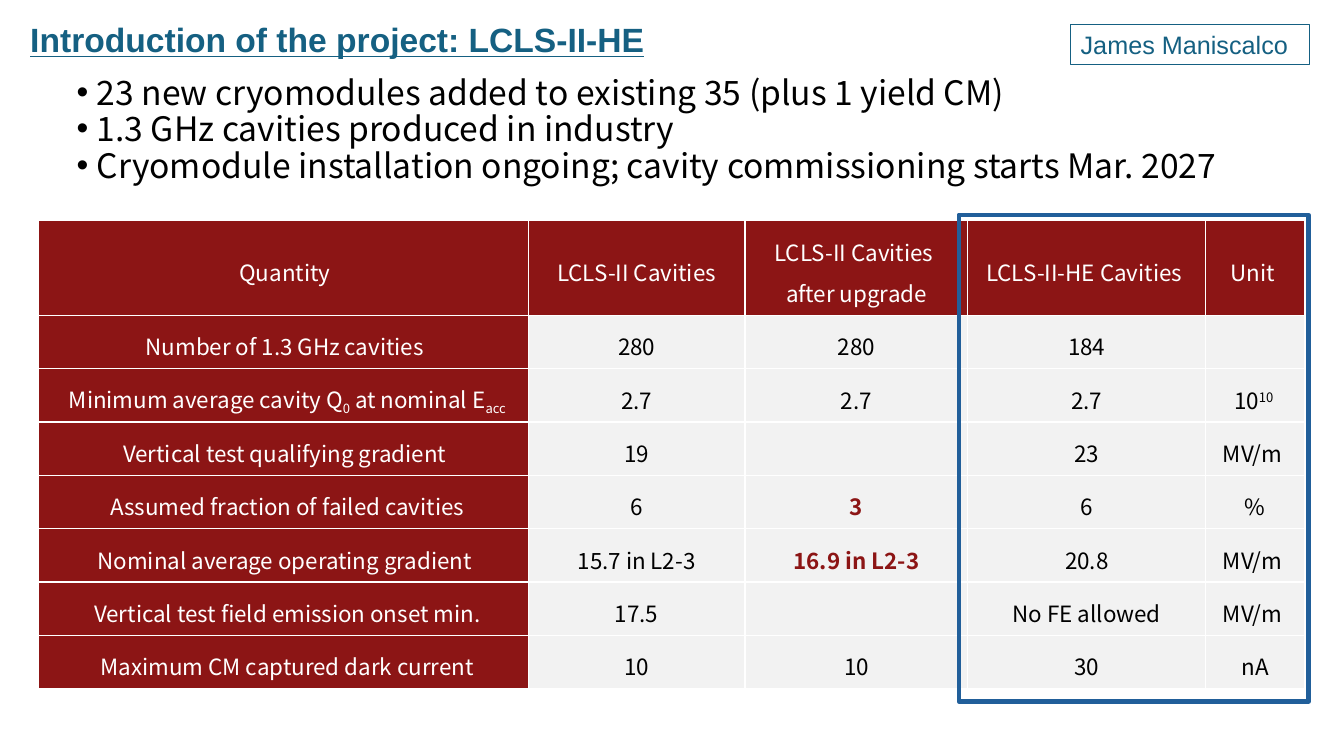
import dataclasses
import lxml.etree
import pptx
import pptx.dml.color
import pptx.enum.shapes
import pptx.enum.text
import pptx.oxml.ns
import pptx.util

ALIGN = pptx.enum.text.PP_ALIGN
ANCHOR = pptx.enum.text.MSO_ANCHOR
PT = pptx.util.Pt
WIDE, HIGH = pptx.util.Inches(13.33), pptx.util.Inches(7.5)


@dataclasses.dataclass(frozen=True)
class Theme:
    teal: str = "156082"
    blue: str = "215F9A"
    red: str = "8C1515"
    gray: str = "F2F2F2"
    white: str = "FFFFFF"
    black: str = "000000"
    head: str = "Arial"
    text: str = "Noto Sans CJK JP"
    large: int = 24
    label: int = 18
    small: int = 16


THEME = Theme()

POINTS = [
    "23 new cryomodules added to existing 35 (plus 1 yield CM)",
    "1.3 GHz cavities produced in industry",
    "Cryomodule installation ongoing; cavity commissioning starts Mar. 2027",
]

# "|" parts runs, "_" lowers, "^" raises, "*" stresses
ROWS = [
    ["Quantity ", "LCLS-II Cavities", "LCLS-II Cavities \nafter upgrade",
     "LCLS-II-HE Cavities ", "Unit "],
    ["Number of 1.3 GHz cavities ", "280", "280", "184", ""],
    ["Minimum average cavity Q|_0| at nominal E|_acc", "2.7", "2.7", "2.7", "10|^10 "],
    ["Vertical test qualifying gradient ", "19", "", "23", "MV/m "],
    ["Assumed fraction of failed cavities", "6", "*3", "6", "%"],
    ["Nominal average operating gradient ", "15.7 in L2-3", "*16.9 in L2-3", "20.8", "MV/m "],
    ["Vertical test field emission onset min.", "17.5", "", "No FE allowed", "MV/m "],
    ["Maximum CM captured dark current", "10", "10", "30", "nA"],
]
# Column widths and row heights in percent of the slide
COLS = [36.46, 16.13, 16.58, 17.7, 7.35]
TALL = [12.53] + [7.05] * 7


def across(share):
    return round(WIDE * share / 100)


def down(share):
    return round(HIGH * share / 100)


def place(left, top, width, height):
    """Turn percents of the slide into a box."""
    return across(left), down(top), across(width), down(height)


def color(code):
    return pptx.dml.color.RGBColor.from_string(code)


def style(font, name, size, code, bold=False):
    font.name, font.size, font.bold = name, PT(size), bold
    font.color.rgb = color(code)


def move(shape, box):
    shape.left, shape.top, shape.width, shape.height = box


def outline(slide, box, code, width):
    """Add an empty rectangle with a plain line."""
    shape = slide.shapes.add_shape(pptx.enum.shapes.MSO_SHAPE.RECTANGLE, *box)
    shape.shadow.inherit = False
    shape.fill.background()
    shape.line.color.rgb = color(code)
    shape.line.width = PT(width)
    return shape


def add_title(slide, box):
    title = slide.shapes.title
    move(title, box)
    frame = title.text_frame
    frame.text = "Introduction of the project: LCLS-II-HE"
    frame.auto_size = pptx.enum.text.MSO_AUTO_SIZE.NONE
    frame.vertical_anchor = ANCHOR.TOP
    para = frame.paragraphs[0]
    para.alignment = ALIGN.LEFT
    font = para.runs[0].font
    style(font, THEME.head, THEME.large, THEME.teal, True)
    font.underline = True


def add_name(slide, box):
    frame = outline(slide, box, THEME.teal, 0.75).text_frame
    frame.text = "James Maniscalco"
    frame.vertical_anchor = ANCHOR.MIDDLE
    para = frame.paragraphs[0]
    para.alignment = ALIGN.LEFT
    style(para.runs[0].font, THEME.head, THEME.label, THEME.teal)


def add_list(slide, box):
    body = slide.placeholders[1]
    move(body, box)
    frame = body.text_frame
    frame.text = "\n".join(POINTS)
    frame.auto_size = pptx.enum.text.MSO_AUTO_SIZE.NONE
    frame.vertical_anchor = ANCHOR.TOP
    hang = pptx.util.Inches(0.2)
    for rank, para in enumerate(frame.paragraphs):
        para.level = 1
        para.line_spacing = 0.8
        para.space_before = PT(3 if rank else 0)
        props = para._p.get_or_add_pPr()
        props.set("marL", str(hang))
        props.set("indent", str(-hang))
        bullet = lxml.etree.SubElement(props, pptx.oxml.ns.qn("a:buChar"))
        bullet.set("char", "•")
        style(para.runs[0].font, THEME.text, THEME.large, THEME.black)


def add_edge(cell):
    """Draw thin white lines on all four sides of a cell."""
    props = cell._tc.get_or_add_tcPr()
    for side in "LRTB":
        line = lxml.etree.SubElement(props, pptx.oxml.ns.qn(f"a:ln{side}"), w=str(PT(1)))
        fill = lxml.etree.SubElement(line, pptx.oxml.ns.qn("a:solidFill"))
        lxml.etree.SubElement(fill, pptx.oxml.ns.qn("a:srgbClr"), val=THEME.white)


def fill_cell(cell, text, dark, first):
    add_edge(cell)
    cell.fill.solid()
    cell.fill.fore_color.rgb = color(THEME.red if dark else THEME.gray)
    cell.margin_left = cell.margin_right = cell.margin_top = cell.margin_bottom = 0
    cell.vertical_anchor = ANCHOR.MIDDLE
    if not text:
        return
    stress = text.startswith("*")
    parts = text.lstrip("*").split("|")
    para = cell.text_frame.paragraphs[0]
    para.text = parts[0]
    for part in parts[1:]:
        run = para.add_run()
        run.text = part.lstrip("_^")
        shift = {"_": "-25000", "^": "30000"}.get(part[0])
        if shift:
            run._r.get_or_add_rPr().set("baseline", shift)
    para.alignment = ALIGN.CENTER
    para.line_spacing = 1.25
    if dark:
        para.space_after = PT(3)
    if first:
        para._p.get_or_add_pPr().set("marL", str(pptx.util.Inches(0.08)))
    code = THEME.white if dark else THEME.red if stress else THEME.black
    for run in para.runs:
        style(run.font, THEME.text, THEME.small, code, stress)


def add_grid(slide, box):
    table = slide.shapes.add_table(len(ROWS), len(COLS), *box).table
    for col, share in zip(table.columns, COLS):
        col.width = across(share)
    for row, share in zip(table.rows, TALL):
        row.height = down(share)
    for y, row in enumerate(ROWS):
        for x, text in enumerate(row):
            fill_cell(table.cell(y, x), text, x == 0 or y == 0, x == 0)


def main():
    deck = pptx.Presentation()
    deck.slide_width, deck.slide_height = WIDE, HIGH
    slide = deck.slides.add_slide(deck.slide_layouts[1])
    # Heading and speaker
    add_title(slide, place(1.5, 1.87, 60, 6.67))
    add_name(slide, place(79.67, 3.2, 17.78, 5.33))
    # Key points and cavity table
    add_list(slide, place(4.95, 9.87, 90, 82.53))
    add_grid(slide, place(2.85, 29.2, sum(COLS), sum(TALL)))
    # Frame around the last two columns
    outline(slide, place(71.34, 28.4, 26.03, 64.4), THEME.blue, 3)
    deck.save("out.pptx")


if __name__ == "__main__":
    main()
